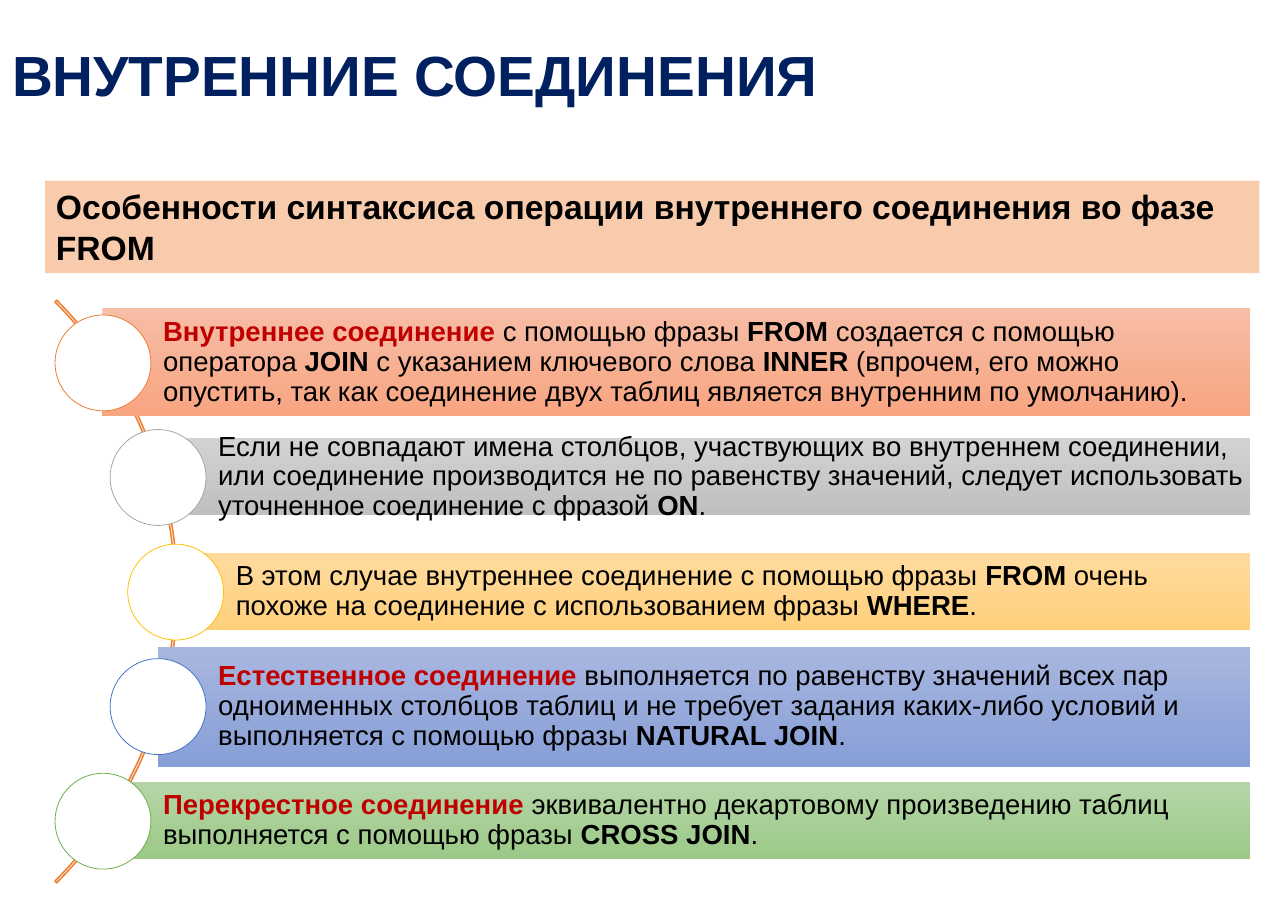
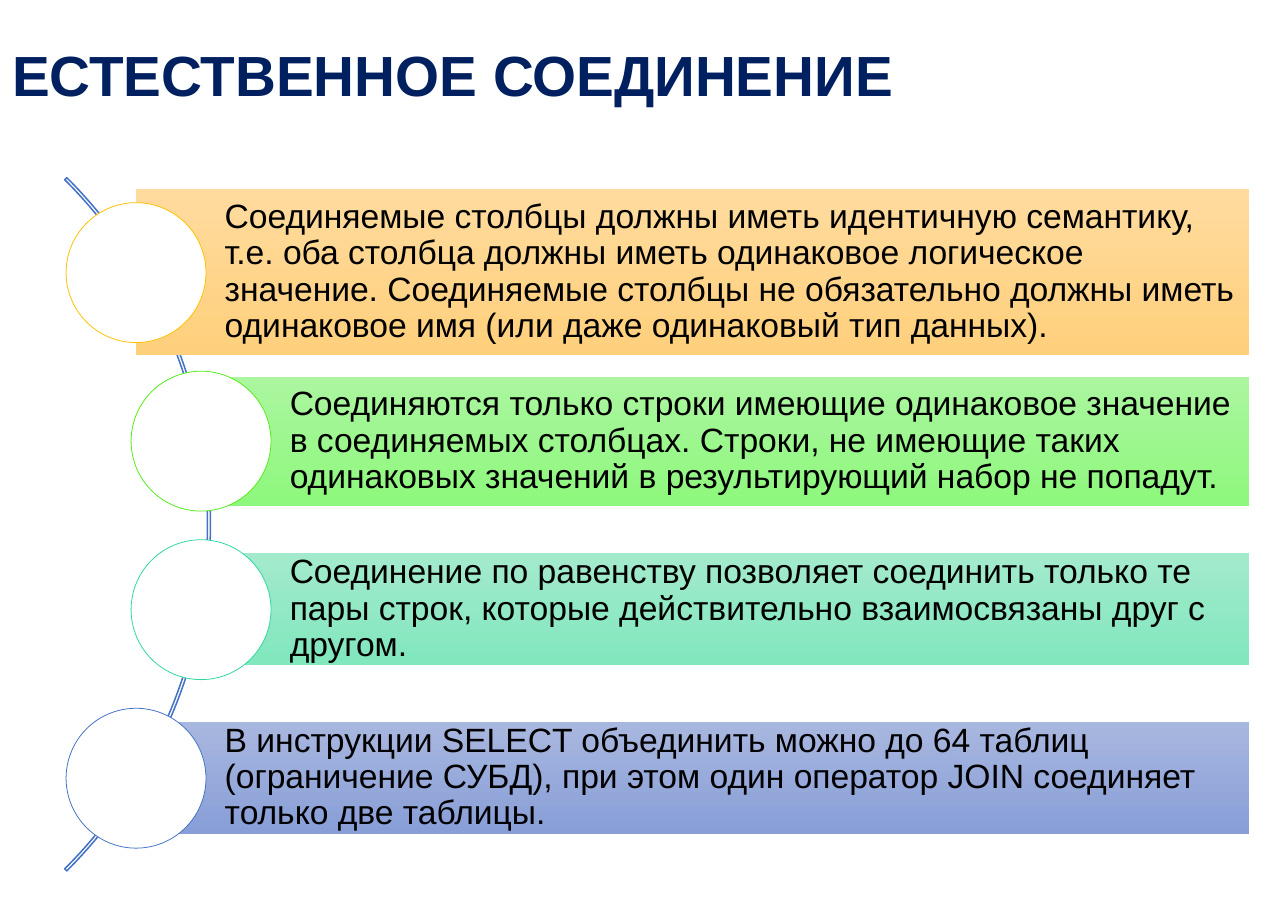
"""Build two slides about SQL joins, each with bars set along an arc."""
from dataclasses import dataclass

from pptx import Presentation
from pptx.dml.color import RGBColor
from pptx.enum.shapes import MSO_SHAPE
from pptx.enum.text import MSO_ANCHOR, PP_ALIGN
from pptx.util import Pt

RECTANGLE = MSO_SHAPE.RECTANGLE
OVAL = MSO_SHAPE.OVAL
BLOCK_ARC = MSO_SHAPE.BLOCK_ARC
TOP = MSO_ANCHOR.TOP
MIDDLE = MSO_ANCHOR.MIDDLE
LEFT = PP_ALIGN.LEFT

PX = 9144
PAGE_WIDTH, PAGE_HEIGHT = 1169, 827
ARC_ADJUSTMENTS = (189, 27, 0.003)


@dataclass(frozen=True)
class Theme:
    font: str = "Arial"
    title: str = "002060"
    text: str = "000000"
    accent: str = "C00000"
    white: str = "FFFFFF"
    banner: str = "F8CBAD"
    orange: tuple = ("F7BDA5", "F8A582", "ED7D31")
    gray: tuple = ("D2D2D2", "C0C0C0", "A5A5A5")
    gold: tuple = ("FFDB9E", "FFD07C", "FFC000")
    blue: tuple = ("A8B7DF", "889ED7", "4472C4")
    green: tuple = ("B5D5A7", "9CC987", "70AD47")
    lime: tuple = ("ACF6A0", "8EF77D", "53EB17")
    mint: tuple = ("A3EACC", "81E7BD", "2ED7A1")
    title_size: int = 37
    large_size: int = 22
    small_size: int = 18


THEME = Theme()

SLIDES = [
    {
        "title": "ВНУТРЕННИЕ СОЕДИНЕНИЯ",
        "banner": "**Особенности синтаксиса операции внутреннего соединения во фазе FROM**",
        "arc": (-213, 537, 748, THEME.orange[2]),
        "first": 329, "pitch": 104, "circle": 87, "right": 1135,
        "size": THEME.small_size, "insets": (55, 5, 5, 5),
        "rows": [
            (93, 98, THEME.orange,
             "**Внутреннее соединение ** с помощью фразы **FROM** создается с помощью оператора "
             "**JOIN** с указанием ключевого слова **INNER** (впрочем, его можно опустить, "
             "так как соединение двух таблиц является внутренним по умолчанию).".replace(" ** ", " **")),
            (143, 70, THEME.gray,
             "Если не совпадают имена столбцов, участвующих во внутреннем соединении, или соединение "
             "производится не по равенству значений, следует использовать уточненное соединение "
             "с фразой **ON**."),
            (159, 70, THEME.gold,
             "В этом случае внутреннее соединение с помощью фразы **FROM** очень похоже "
             "на соединение с использованием фразы **WHERE**."),
            (143, 109, THEME.blue,
             "**Естественное соединение **выполняется по равенству значений всех пар одноименных "
             "столбцов таблиц и не требует задания каких-либо условий и выполняется "
             "с помощью фразы **NATURAL JOIN**."),
            (93, 70, THEME.green,
             "**Перекрестное соединение **эквивалентно декартовому произведению таблиц "
             "выполняется с помощью фразы **CROSS JOIN**."),
        ],
    },
    {
        "title": "ЕСТЕСТВЕННОЕ СОЕДИНЕНИЕ",
        "banner": None,
        "arc": (-254, 476, 890, THEME.blue[2]),
        "first": 247, "pitch": 153, "circle": 127, "right": 1134,
        "size": THEME.large_size, "insets": (81, 6, 6, 6),
        "rows": [
            (123, 150, THEME.gold,
             "Соединяемые столбцы должны иметь идентичную семантику, т.е. оба столбца должны иметь "
             "одинаковое логическое значение. Соединяемые столбцы не обязательно должны иметь "
             "одинаковое имя (или даже одинаковый тип данных)."),
            (182, 117, THEME.lime,
             "Соединяются только строки имеющие одинаковое значение в соединяемых столбцах. Строки, "
             "не имеющие таких одинаковых значений в результирующий набор не попадут."),
            (182, 102, THEME.mint,
             "Соединение по равенству позволяет соединить только те пары строк, которые "
             "действительно взаимосвязаны друг с другом."),
            (123, 102, THEME.blue,
             "В инструкции SELECT объединить можно до 64 таблиц (ограничение СУБД), при этом "
             "один оператор JOIN соединяет только две таблицы."),
        ],
    },
]


def add_figure(page, kind, left, top, width, height, fill=None, line=None, weight=1):
    """Add a shape with a solid, gradient or empty fill."""
    figure = page.shapes.add_shape(kind, left * PX, top * PX, width * PX, height * PX)
    figure.shadow.inherit = False
    if fill is None:
        figure.fill.background()
    elif isinstance(fill, tuple):
        figure.fill.gradient()
        figure.fill.gradient_angle = 270
        for stop, color in zip(figure.fill.gradient_stops, fill):
            stop.color.rgb = RGBColor.from_string(color)
    else:
        figure.fill.solid()
        figure.fill.fore_color.rgb = RGBColor.from_string(fill)
    if line is None:
        figure.line.fill.background()
    else:
        figure.line.color.rgb = RGBColor.from_string(line)
        figure.line.width = Pt(weight)
    return figure


def write_text(box, text, size, insets, color=THEME.text, lead=THEME.text, anchor=MIDDLE, spacing=0.9):
    """Write text whose ** pairs mark bold; a bold opening takes the lead colour."""
    frame = box.text_frame
    frame.word_wrap = True
    frame.vertical_anchor = anchor
    frame.margin_left, frame.margin_top, frame.margin_right, frame.margin_bottom = (
        inset * PX for inset in insets)
    para = frame.paragraphs[0]
    para.alignment = LEFT
    para.line_spacing = spacing
    pieces = text.split("**")
    for index, piece in enumerate(pieces):
        if piece:
            span = para.add_run()
            span.text = piece
            span.font.name = THEME.font
            span.font.size = Pt(size)
            span.font.bold = index % 2 == 1
            opening = index == 1 and not pieces[0]
            span.font.color.rgb = RGBColor.from_string(lead if opening else color)


deck = Presentation()
deck.slide_width, deck.slide_height = PAGE_WIDTH * PX, PAGE_HEIGHT * PX

for content in SLIDES:
    page = deck.slides.add_slide(deck.slide_layouts[6])
    title = page.shapes.add_textbox(0, 12 * PX, PAGE_WIDTH * PX, 118 * PX)
    write_text(title, f"**{content['title']}**", THEME.title_size, (11, 6, 11, 6), lead=THEME.title)

    if content["banner"]:
        banner = add_figure(page, RECTANGLE, 41, 164, 1102, 84, THEME.banner)
        write_text(banner, content["banner"], THEME.large_size, (10, 5, 10, 5), anchor=TOP, spacing=1.0)

    center_x, center_y, diameter, arc_color = content["arc"]
    arc = add_figure(page, BLOCK_ARC, center_x - diameter // 2, center_y - diameter // 2,
                     diameter, diameter, line=arc_color)
    for index, value in enumerate(ARC_ADJUSTMENTS):
        arc.adjustments[index] = value

    circle = content["circle"]
    for index, (left, height, (light, dark, outline), text) in enumerate(content["rows"]):
        middle = content["first"] + index * content["pitch"]
        bar = add_figure(page, RECTANGLE, left, middle - height // 2,
                         content["right"] - left, height, (light, dark))
        write_text(bar, text, content["size"], content["insets"], lead=THEME.accent)
        add_figure(page, OVAL, left - circle // 2, middle - circle // 2, circle, circle,
                   THEME.white, outline, 0.5)

deck.save("out.pptx")
